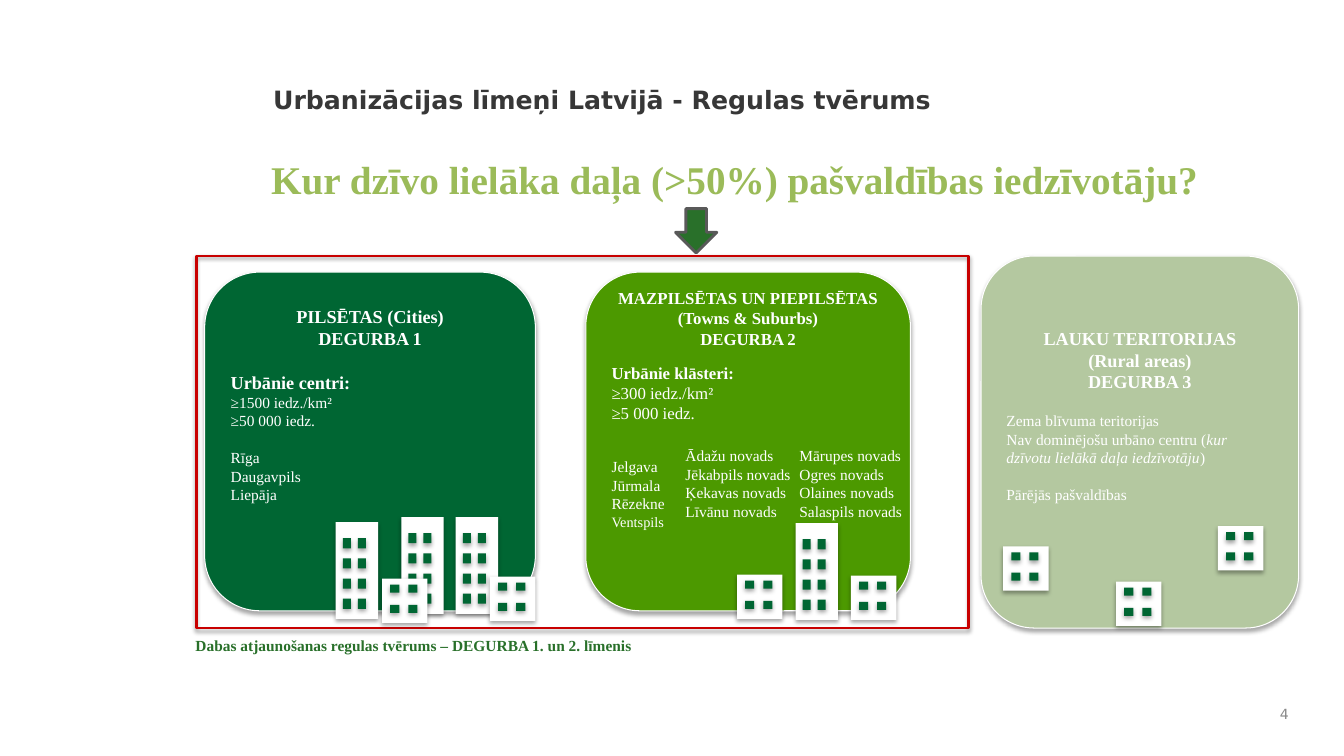
from dataclasses import dataclass

from lxml import etree
from pptx import Presentation
from pptx.dml.color import RGBColor
from pptx.enum import shapes, text
from pptx.oxml import ns
from pptx.util import Inches, Pt

KIND = shapes.MSO_SHAPE
ALIGN = text.PP_ALIGN
ANCHOR = text.MSO_ANCHOR


@dataclass(frozen=True)
class Theme:
    serif: str = "Times New Roman"
    sans: str = "DejaVu Sans"
    white: str = "FFFFFF"
    city: str = "006633"
    town: str = "4C9900"
    rural: str = "B4C8A0"
    question: str = "9BBB59"
    scope: str = "29702A"
    frame: str = "C80000"
    arrow_edge: str = "595959"
    title: str = "373737"
    number: str = "898989"
    question_size: float = 28
    title_size: float = 18
    card_size: float = 13
    town_size: float = 12
    list_size: float = 11
    last_town_size: float = 10.2
    number_size: float = 10


@dataclass
class Para:
    """Paragraph content: plain text, or (text, italic) pairs."""
    content: object
    size: float
    bold: bool = False
    align: object = ALIGN.LEFT
    before: float = 0


class UrbanSlide:
    def __init__(self, slide, theme):
        self.slide = slide
        self.theme = theme

    def fill_text(self, frame, paras, color, font):
        for index, para in enumerate(paras):
            paragraph = frame.paragraphs[0] if index == 0 else frame.add_paragraph()
            paragraph.alignment = para.align
            if para.before:
                paragraph.space_before = Pt(para.before)
            paragraph.font.name = font
            paragraph.font.size = Pt(para.size)
            paragraph.font.bold = para.bold
            paragraph.font.color.rgb = RGBColor.from_string(color)
            if isinstance(para.content, str):
                paragraph.text = para.content
                continue
            for words, italic in para.content:
                run = paragraph.add_run()
                run.text = words
                run.font.italic = italic

    def label(self, box, paras, color, font=None, anchor=ANCHOR.TOP):
        frame = self.slide.shapes.add_textbox(*map(Inches, box)).text_frame
        frame.word_wrap = True
        frame.vertical_anchor = anchor
        self.fill_text(frame, paras, color, font or self.theme.serif)

    def shape(self, kind, box, fill=None, line=None, width=0.75, shadow=True, parent=None):
        item = (parent or self.slide).shapes.add_shape(kind, *map(Inches, box))
        item.shadow.inherit = False
        if fill:
            item.fill.solid()
            item.fill.fore_color.rgb = RGBColor.from_string(fill)
        else:
            item.fill.background()
        if line:
            item.line.color.rgb = RGBColor.from_string(line)
            item.line.width = Pt(width)
        else:
            item.line.fill.background()
        if shadow:
            self.drop_shadow(item)
        return item

    def drop_shadow(self, item):
        effects = item.element.spPr.find(ns.qn("a:effectLst"))
        outer = etree.SubElement(effects, ns.qn("a:outerShdw"), blurRad=str(Pt(3.1)),
                                 dist=str(Pt(1.8)), dir="5400000", rotWithShape="0")
        black = etree.SubElement(outer, ns.qn("a:srgbClr"), val="000000")
        etree.SubElement(black, ns.qn("a:alpha"), val="35000")

    def card(self, box, fill, top_inset, paras):
        frame = self.shape(KIND.ROUNDED_RECTANGLE, box, fill, self.theme.white).text_frame
        frame.word_wrap = True
        frame.vertical_anchor = ANCHOR.TOP
        frame.margin_top = Inches(top_inset)
        self.fill_text(frame, paras, self.theme.white, self.theme.serif)

    def building(self, left, top, size, window, columns, rows):
        """Group a wall with windows at the given column and row offsets."""
        group = self.slide.shapes.add_group_shape()
        self.shape(KIND.RECTANGLE, (left, top, *size), self.theme.white, parent=group)
        for dy in rows:
            for dx in columns:
                self.shape(KIND.RECTANGLE, (left + dx, top + dy, *window),
                           self.theme.city, parent=group)

    def tower(self, left, top):
        self.building(left, top, (0.42, 0.96), (0.08, 0.1), (0.07, 0.22),
                      [0.16 + 0.2 * row for row in range(4)])

    def house(self, left, top):
        self.building(left, top, (0.45, 0.44), (0.09, 0.08), (0.08, 0.26), (0.06, 0.26))


def main():
    deck = Presentation()
    deck.slide_width, deck.slide_height = Inches(13.33), Inches(7.5)
    theme = Theme()
    page = UrbanSlide(deck.slides.add_slide(deck.slide_layouts[6]), theme)
    big, mid, small = theme.card_size, theme.town_size, theme.list_size

    page.label((2.61, 0.42, 8.89, 1.13),
               [Para("Urbanizācijas līmeņi Latvijā - Regulas tvērums", theme.title_size, True)],
               theme.title, theme.sans, ANCHOR.MIDDLE)
    page.label((2.27, 1.49, 10.03, 0.57),
               [Para("Kur dzīvo lielāka daļa (>50%) pašvaldības iedzīvotāju?",
                     theme.question_size, True, ALIGN.CENTER)], theme.question)

    page.card((2.03, 2.7, 3.28, 3.36), theme.city, 0.17, [
        Para("PILSĒTAS (Cities)\nDEGURBA 1", big, True, ALIGN.CENTER),
        Para("Urbānie centri:", big, True, before=15.5),
        Para("≥1500 iedz./km²\n≥50 000 iedz.", small),
        Para("Rīga\nDaugavpils\nLiepāja", small, before=13.3),
    ])
    page.card((5.81, 2.7, 3.22, 3.36), theme.town, 0, [
        Para("MAZPILSĒTAS UN PIEPILSĒTAS\n(Towns & Suburbs)\nDEGURBA 2",
             mid, True, ALIGN.CENTER),
        Para("Urbānie klāsteri:", mid, True, before=10),
        Para("≥300 iedz./km²\n≥5 000 iedz.", mid),
        Para("Jelgava", small, before=24.7),
        Para("Jūrmala", small),
        Para("Rēzekne", small),
        Para("Ventspils", theme.last_town_size),
    ])
    page.card((9.73, 2.54, 3.15, 3.69), theme.rural, 0.55, [
        Para("LAUKU TERITORIJAS\n(Rural areas)\nDEGURBA 3", big, True, ALIGN.CENTER),
        Para("Zema blīvuma teritorijas", small, before=13.3),
        Para([("Nav dominējošu urbāno centru (", False),
              ("kur dzīvotu lielākā daļa iedzīvotāju", True), (")", False)], small),
        Para("Pārējās pašvaldības", small, before=13.3),
    ])

    page.shape(KIND.RECTANGLE, (1.95, 2.54, 7.66, 3.69), line=theme.frame, width=2)
    page.label((1.84, 6.26, 6.67, 0.29),
               [Para("Dabas atjaunošanas regulas tvērums – DEGURBA 1. un 2. līmenis",
                     small, True)], theme.scope)

    for left, top in ((3.98, 5.13), (3.33, 5.18), (4.52, 5.13), (7.89, 5.19)):
        page.tower(left, top)
    for left, top in ((3.79, 5.74), (4.86, 5.72), (7.31, 5.7), (8.44, 5.71),
                      (9.95, 5.42), (11.07, 5.77), (12.08, 5.22)):
        page.house(left, top)

    counties = (
        ("Ādažu novads", "Jēkabpils novads", "Ķekavas novads", "Līvānu novads"),
        ("Mārupes novads", "Ogres novads", "Olaines novads", "Salaspils novads"),
    )
    for column, names in enumerate(counties):
        page.label((6.7 + 1.13 * column, 4.38, 1.32, 0.84),
                   [Para(name, small) for name in names], theme.white)

    page.shape(KIND.DOWN_ARROW, (6.7, 2.07, 0.41, 0.44), theme.scope,
               theme.arrow_edge, 2, shadow=False)
    page.label((12.44, 6.92, 0.44, 0.33),
               [Para("4", theme.number_size, align=ALIGN.RIGHT)],
               theme.number, theme.sans, ANCHOR.MIDDLE)
    deck.save("out.pptx")


if __name__ == "__main__":
    main()
